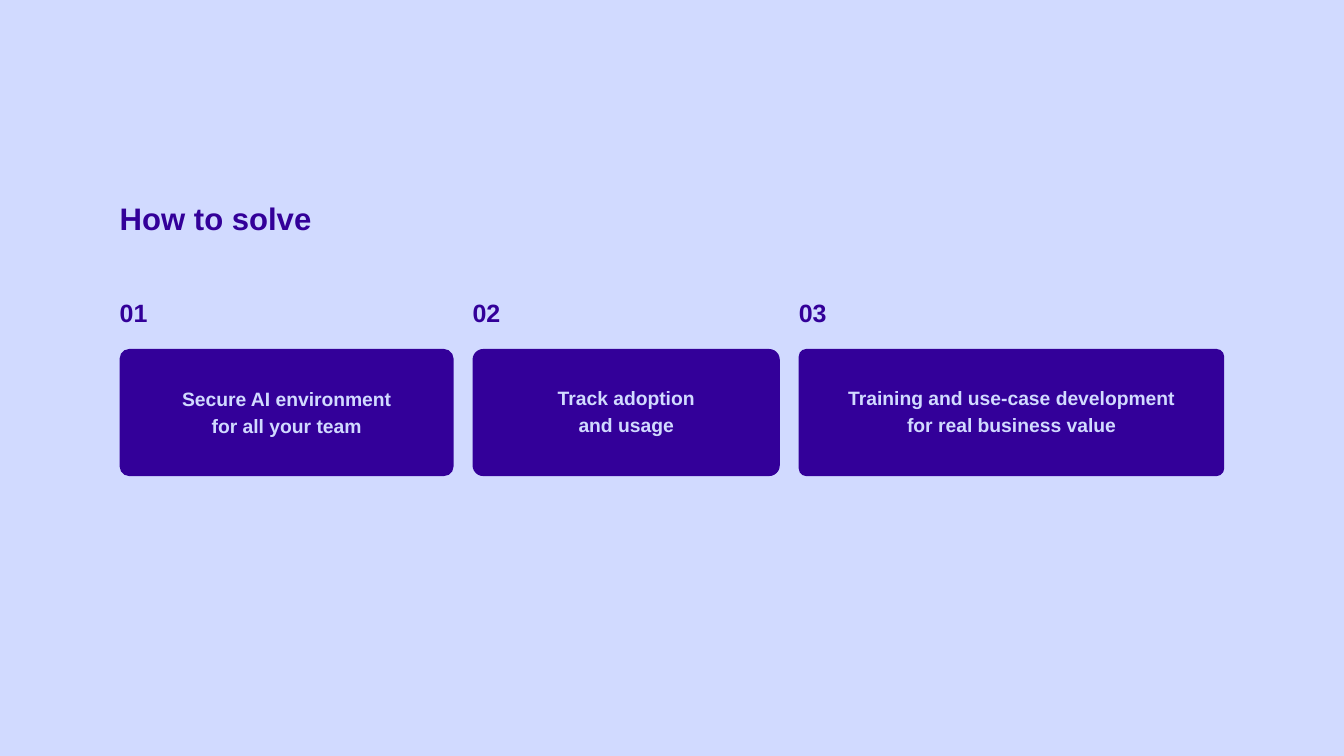
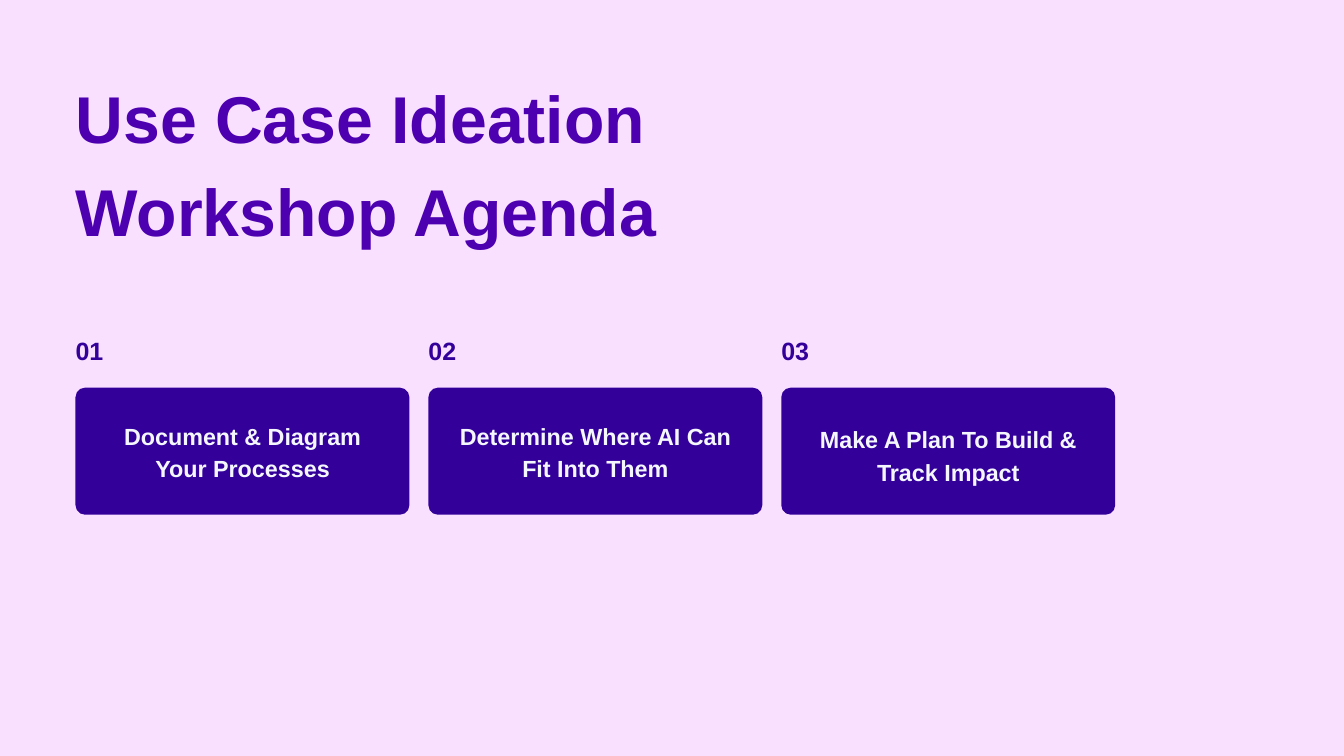
from pptx import Presentation
from pptx.dml.color import RGBColor
from pptx.enum.shapes import MSO_SHAPE as Shape
from pptx.enum.text import MSO_AUTO_SIZE as AutoSize, PP_ALIGN as Align
from pptx.util import Pt

# Shared style
FONT = "Arial"
INDIGO, VIOLET = "330099", "4D00B0"
PALE_BLUE, PALE_PINK, NEAR_WHITE = "D1DAFF", "FAE0FF", "F5F7FF"
CARD_HEIGHT, CARD_GAP = 136.2, 20.3
NUMBER_RISE = 60.9


def color(value):
    return RGBColor.from_string(value)


def add_page(deck, background):
    page = deck.slides.add_slide(deck.slide_layouts[6])
    fill = page.background.fill
    fill.solid()
    fill.fore_color.rgb = color(background)
    return page


def add_text(page, left, top, width, height, lines, size, spacing, ink,
             align=Align.LEFT):
    """Bold text without margins, one paragraph per line."""
    box = page.shapes.add_textbox(Pt(left), Pt(top), Pt(width), Pt(height))
    frame = box.text_frame
    frame.word_wrap = True
    frame.auto_size = AutoSize.SHAPE_TO_FIT_TEXT
    frame.margin_left = frame.margin_right = 0
    frame.margin_top = frame.margin_bottom = 0
    for index, line in enumerate(lines):
        para = frame.add_paragraph() if index else frame.paragraphs[0]
        para.alignment = align
        para.line_spacing = Pt(spacing)
        span = para.add_run()
        span.text = line
        span.font.name = FONT
        span.font.size = Pt(size)
        span.font.bold = True
        span.font.color.rgb = color(ink)


def add_card(page, left, top, width, radius):
    card = page.shapes.add_shape(Shape.ROUNDED_RECTANGLE, Pt(left), Pt(top),
                                 Pt(width), Pt(CARD_HEIGHT))
    card.adjustments[0] = radius / CARD_HEIGHT
    card.shadow.inherit = False
    card.fill.solid()
    card.fill.fore_color.rgb = color(INDIGO)
    card.line.fill.background()


def add_steps(page, left, top, steps, size, spacing, ink):
    """Row of numbered cards; a step is (width, radius, text width, text drop, lines)."""
    for number, (width, radius, text_width, drop, lines) in enumerate(steps, 1):
        add_card(page, left, top, width, radius)
        add_text(page, left, top - NUMBER_RISE, 60, 37, [f"{number:02}"],
                 26.8, 37.5, INDIGO)
        add_text(page, left + (width - text_width) / 2, top + drop, text_width,
                 2 * spacing, lines, size, spacing, ink, Align.CENTER)
        left += width + CARD_GAP


def main():
    deck = Presentation()
    deck.slide_width, deck.slide_height = Pt(1440), Pt(810)

    # Solution steps
    page = add_page(deck, PALE_BLUE)
    add_text(page, 128.2, 207.4, 418, 45.5, ["How to solve"], 33.3, 46.6, INDIGO)
    add_steps(page, 128.2, 373.9, [
        (357.8, 10.3, 255, 37.4, ["Secure AI environment for all your team"]),
        (329.2, 11.5, 329.2, 36, ["Track adoption", "and usage"]),
        (455.8, 8, 366, 36,
         ["Training and use-case development for real business value"]),
    ], 20.7, 28.9, PALE_BLUE)

    # Workshop agenda
    page = add_page(deck, PALE_PINK)
    add_text(page, 80.9, 69.1, 829, 196, ["Use Case Ideation Workshop Agenda"],
             70.9, 99.2, VIOLET)
    add_steps(page, 80.9, 415.3, [
        (357.8, 10.3, 292, 31.7, ["Document & Diagram Your Processes"]),
        (357.8, 10.3, 292, 31.7, ["Determine Where AI Can Fit Into Them"]),
        (357.8, 10.3, 283, 35.3, ["Make A Plan To Build & Track Impact"]),
    ], 25, 35, NEAR_WHITE)

    deck.save("out.pptx")


if __name__ == "__main__":
    main()
